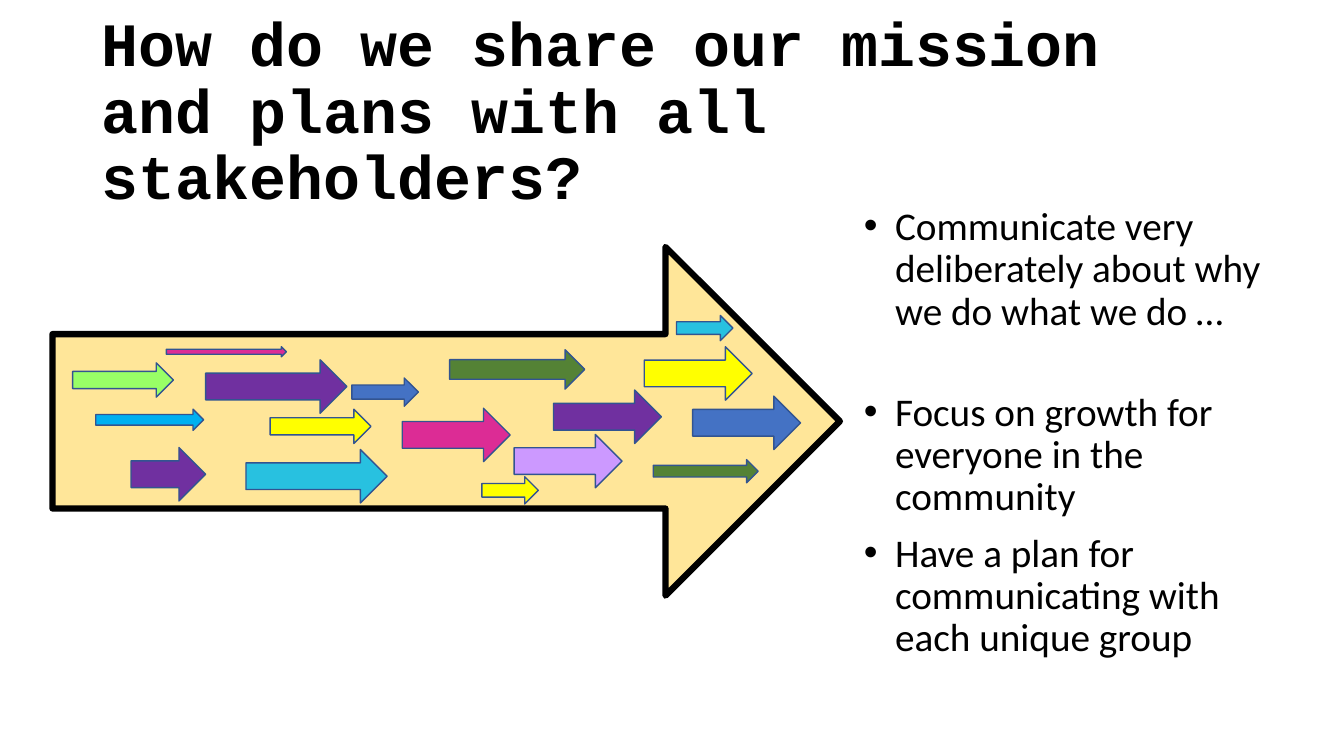
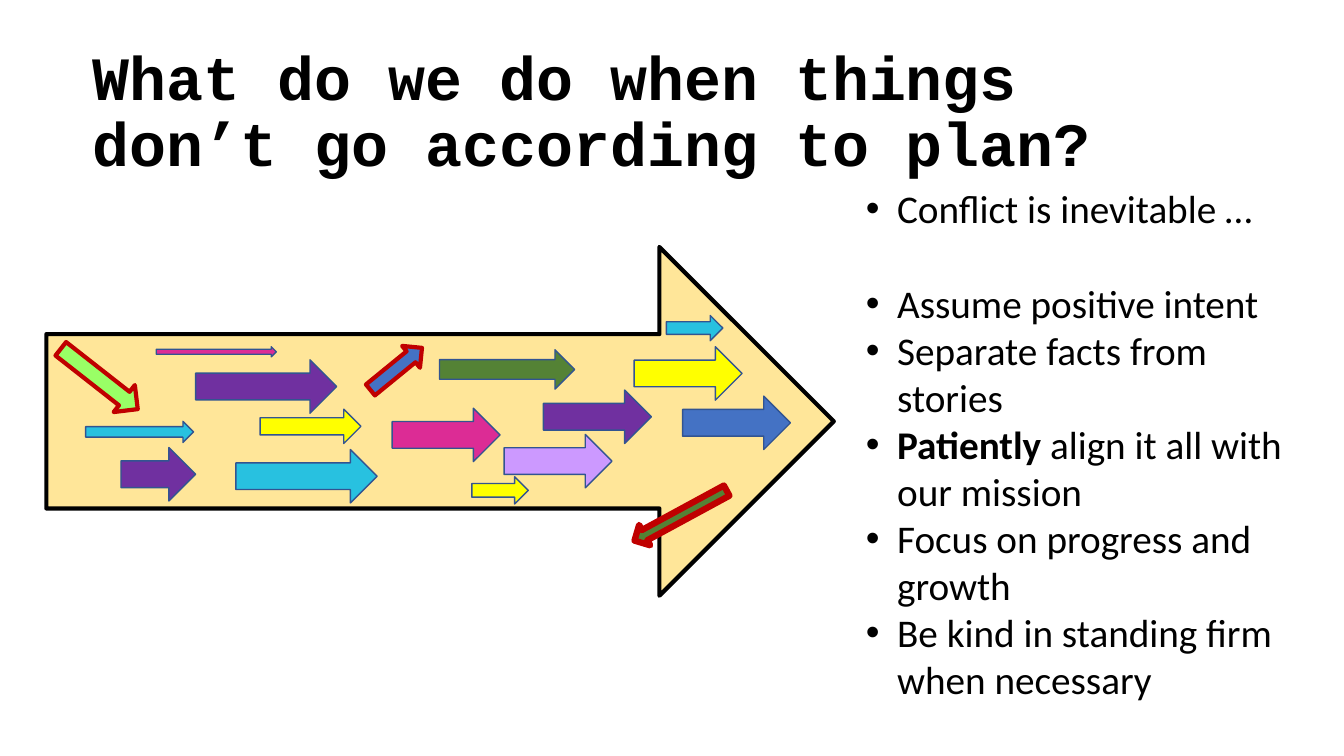
from pptx import Presentation
from pptx.dml.color import RGBColor
from pptx.enum.shapes import MSO_SHAPE
from pptx.enum.text import MSO_ANCHOR, MSO_AUTO_SIZE, PP_ALIGN
from pptx.oxml import parse_xml
from pptx.oxml.ns import nsdecls
from pptx.util import Emu, Pt

PX = 9144  # EMU per px, 100 px to the inch
COLORS = {
    "ink": "000000", "sand": "FFE699", "edge": "325491", "alert": "C00000",
    "sky": "00B0F0", "cyan": "28C1E0", "pink": "DC2C95", "purple": "7030A0",
    "green": "548235", "lilac": "CC99FF", "blue": "4472C4", "yellow": "FFFF00",
    "lime": "99FF66",
}
TITLE_FONT, TITLE_SIZE = "Courier New", 44
BODY_FONT, BODY_SIZE = "Calibri", 28
BULLET_INDENT = 31

# Small arrows, back to front: left, top, width, height, fill
ARROWS = {
    "slim left": (95, 406, 107, 21, "sky"),
    "pink centre": (399, 405, 107, 53, "pink"),
    "purple centre": (549, 387, 107, 53, "purple"),
    "green right": (648, 456, 104, 23, "green"),
    "cyan low": (244, 446, 140, 53, "cyan"),
    "purple high": (204, 357, 140, 53, "purple"),
    "lilac": (510, 431, 107, 53, "lilac"),
    "blue right": (687, 393, 107, 53, "blue"),
    "yellow right": (639, 344, 107, 53, "yellow"),
    "purple low": (130, 444, 74, 53, "purple"),
    "green high": (446, 347, 134, 39, "green"),
    "pink sliver": (165, 344, 119, 10, "pink"),
    "blue small": (349, 375, 66, 28, "blue"),
    "yellow left": (268, 406, 100, 34, "yellow"),
    "cyan small": (671, 313, 56, 25, "cyan"),
    "yellow small": (478, 473, 56, 27, "yellow"),
    "lime": (72, 360, 100, 34, "lime"),
}
# Arrows that break rank: the same five values, then rotation and line weight
STRAY_ARROWS = {
    "slim left": (85, 418, 107, 21, "cyan"),
    "green right": (623, 500, 104, 23, "green", 151.5, 4.5),
    "blue small": (360, 352, 66, 28, "blue", 320.8, 3),
    "lime": (50, 359, 97, 34, "lime", 38.1, 3),
}

# Each bullet is a list of (text, bold) runs; "gap" is the space after the first
SLIDES = [
    {
        "title": "How do we share our mission and plans with all stakeholders?",
        "title_left": 91, "big_left": 52, "big_weight": 4.5,
        "shift": 0, "strays": {},
        "body": (847, 200, 434, 464),
        "line_spacing": 0.9, "space_before": 10, "gap": 42,
        "bullets": [
            [("Communicate very deliberately about why we do what we do …", False)],
            [("Focus on growth for everyone in the community", False)],
            [("Have a plan for communicating with each unique group", False)],
        ],
    },
    {
        "title": "What do we do when things don’t go according to plan?",
        "title_left": 82, "big_left": 46, "big_weight": 3,
        "shift": -10, "strays": STRAY_ARROWS,
        "body": (849, 178, 443, 528),
        "line_spacing": 1.0, "space_before": 0, "gap": 34,
        "bullets": [
            [("Conflict is inevitable …", False)],
            [("Assume positive intent", False)],
            [("Separate facts from stories", False)],
            [("Patiently", True), (" align it all with our mission", False)],
            [("Focus on progress and growth", False)],
            [("Be kind in standing firm when necessary", False)],
        ],
    },
]


def px(*lengths):
    return [Emu(length * PX) for length in lengths]


def color(name):
    return RGBColor.from_string(COLORS[name])


def add_run(para, text, font, size, bold):
    span = para.add_run()
    span.text = text
    span.font.name, span.font.size, span.font.bold = font, Pt(size), bold
    span.font.color.rgb = color("ink")


def add_title(page, text, left):
    title = page.shapes.title
    title.left, title.top, title.width, title.height = px(left, 40, 1150, 145)
    frame = title.text_frame
    frame.word_wrap = True
    frame.auto_size = MSO_AUTO_SIZE.NONE
    frame.vertical_anchor = MSO_ANCHOR.MIDDLE
    para = frame.paragraphs[0]
    para.alignment, para.line_spacing = PP_ALIGN.LEFT, 0.9
    add_run(para, text, TITLE_FONT, TITLE_SIZE, True)


def add_arrow(page, left, top, width, height, fill, rotation=0, weight=1, edge="edge"):
    arrow = page.shapes.add_shape(MSO_SHAPE.RIGHT_ARROW, *px(left, top, width, height))
    arrow.rotation = rotation
    arrow.shadow.inherit = False
    arrow.fill.solid()
    arrow.fill.fore_color.rgb = color(fill)
    arrow.line.color.rgb = color(edge)
    arrow.line.width = Pt(weight)


def add_small_arrows(page, shift, strays):
    for name, (left, *rest) in ARROWS.items():
        if name in strays:
            stray = strays[name]
            add_arrow(page, *stray, edge="alert" if len(stray) > 5 else "edge")
        else:
            add_arrow(page, left + shift, *rest)


def set_bullet(para):
    props = para._p.get_or_add_pPr()
    props.set("marL", str(BULLET_INDENT * PX))
    props.set("indent", str(-BULLET_INDENT * PX))
    props.append(parse_xml(f'<a:buFont {nsdecls("a")} typeface="Arial"/>'))
    props.append(parse_xml(f'<a:buChar {nsdecls("a")} char="•"/>'))


def add_bullets(page, content):
    box = page.shapes.add_textbox(*px(*content["body"]))
    frame = box.text_frame
    frame.word_wrap = True
    for index, runs in enumerate(content["bullets"]):
        para = frame.add_paragraph() if index else frame.paragraphs[0]
        para.line_spacing = content["line_spacing"]
        para.space_before = Pt(content["gap"] if index == 1 else content["space_before"])
        set_bullet(para)
        for text, bold in runs:
            add_run(para, text, BODY_FONT, BODY_SIZE, bold)


def main():
    deck = Presentation()
    deck.slide_width, deck.slide_height = px(1333, 750)
    for content in SLIDES:
        page = deck.slides.add_slide(deck.slide_layouts[5])
        add_title(page, content["title"], content["title_left"])
        add_arrow(page, content["big_left"], 245, 781, 346, "sand",
                  weight=content["big_weight"], edge="ink")
        add_small_arrows(page, content["shift"], content["strays"])
        add_bullets(page, content)
    deck.save("out.pptx")


if __name__ == "__main__":
    main()
